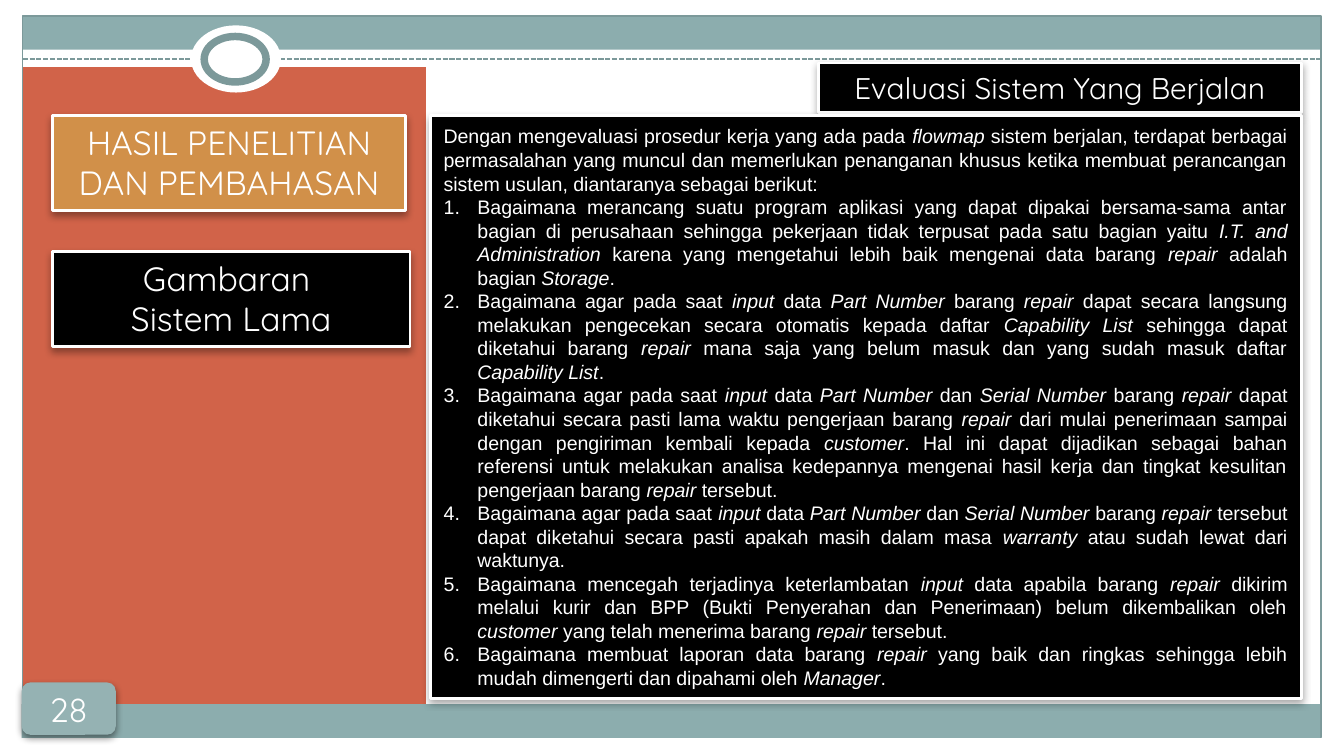
from lxml import etree
from pptx import Presentation
from pptx.dml.color import RGBColor
from pptx.enum.dml import MSO_LINE
from pptx.enum.shapes import MSO_CONNECTOR, MSO_SHAPE
from pptx.enum.text import MSO_ANCHOR, MSO_AUTO_SIZE, PP_ALIGN
from pptx.oxml.ns import qn
from pptx.util import Cm, Pt

RECTANGLE, OVAL = MSO_SHAPE.RECTANGLE, MSO_SHAPE.OVAL
ROUNDED = MSO_SHAPE.ROUNDED_RECTANGLE
STRAIGHT, SHORT_DASH = MSO_CONNECTOR.STRAIGHT, MSO_LINE.SQUARE_DOT
CENTER, JUSTIFY = PP_ALIGN.CENTER, PP_ALIGN.JUSTIFY
TOP, MIDDLE = MSO_ANCHOR.TOP, MSO_ANCHOR.MIDDLE
NO_AUTOFIT = MSO_AUTO_SIZE.NONE

WHITE = RGBColor(0xFF, 0xFF, 0xFF)
BLACK = RGBColor(0, 0, 0)
TEAL = RGBColor(0x8C, 0xAD, 0xAE)
DARK_TEAL = RGBColor(0x7C, 0x99, 0x9A)
LIGHT_TEAL = RGBColor(0x95, 0xB2, 0xB3)
RED = RGBColor(0xD1, 0x63, 0x49)
OCHRE = RGBColor(0xD1, 0x90, 0x49)

DISPLAY_FONT, BODY_FONT = "Quicksand", "Arial"

# Asterisks enclose italic words.
INTRO = (
    "Dengan mengevaluasi prosedur kerja yang ada pada *flowmap* sistem berjalan, "
    "terdapat berbagai permasalahan yang muncul dan memerlukan penanganan khusus "
    "ketika membuat perancangan sistem usulan, diantaranya sebagai berikut:"
)
PROBLEMS = [
    "Bagaimana merancang suatu program aplikasi yang dapat dipakai bersama-sama "
    "antar bagian di perusahaan sehingga pekerjaan tidak terpusat pada satu bagian "
    "yaitu *I.T. and Administration* karena yang mengetahui lebih baik mengenai "
    "data barang *repair* adalah bagian *Storage*.",
    "Bagaimana agar pada saat *input* data *Part Number* barang *repair* dapat "
    "secara langsung melakukan pengecekan secara otomatis kepada daftar "
    "*Capability List* sehingga dapat diketahui barang *repair* mana saja yang "
    "belum masuk dan yang sudah masuk daftar *Capability List*.",
    "Bagaimana agar pada saat *input* data *Part Number* dan *Serial Number* "
    "barang *repair* dapat diketahui secara pasti lama waktu pengerjaan barang "
    "*repair* dari mulai penerimaan sampai dengan pengiriman kembali kepada "
    "*customer*. Hal ini dapat dijadikan sebagai bahan referensi untuk melakukan "
    "analisa kedepannya mengenai hasil kerja dan tingkat kesulitan pengerjaan "
    "barang *repair* tersebut.",
    "Bagaimana agar pada saat *input* data *Part Number* dan *Serial Number* "
    "barang *repair* tersebut dapat diketahui secara pasti apakah masih dalam masa "
    "*warranty* atau sudah lewat dari waktunya.",
    "Bagaimana mencegah terjadinya keterlambatan *input* data apabila barang "
    "*repair* dikirim melalui kurir dan BPP (Bukti Penyerahan dan Penerimaan) "
    "belum dikembalikan oleh *customer* yang telah menerima barang *repair* "
    "tersebut.",
    "Bagaimana membuat laporan data barang *repair* yang baik dan ringkas sehingga "
    "lebih mudah dimengerti dan dipahami oleh *Manager*.",
]


def place(box, left, top, width, height):
    box.left, box.top = Cm(left), Cm(top)
    box.width, box.height = Cm(width), Cm(height)


def paint(box, fill=None, line=None, weight=1.57):
    box.shadow.inherit = False
    if fill is None:
        box.fill.background()
    else:
        box.fill.solid()
        box.fill.fore_color.rgb = fill
    if line is None:
        box.line.fill.background()
    else:
        box.line.color.rgb = line
        box.line.width = Pt(weight)


def add_shape(page, kind, bounds, fill=None, line=None, weight=1.57):
    box = page.shapes.add_shape(kind, *map(Cm, bounds))
    paint(box, fill, line, weight)
    return box


def add_shadow(box, opacity=35):
    """Cast a soft black shadow straight down."""
    effects = box.element.spPr.find(qn("a:effectLst"))
    shadow = etree.SubElement(
        effects, qn("a:outerShdw"), blurRad=str(Pt(4)), dist=str(Pt(2)),
        dir="5400000", algn="ctr", rotWithShape="0")
    color = etree.SubElement(shadow, qn("a:srgbClr"), val=str(BLACK))
    etree.SubElement(color, qn("a:alpha"), val=str(opacity * 1000))


def add_text(para, text, font, size):
    """Add runs, with the words between asterisks in italics."""
    for index, part in enumerate(text.split("*")):
        span = para.add_run()
        span.text = part
        span.font.name = font
        span.font.size = Pt(size)
        span.font.color.rgb = WHITE
        if index % 2:
            span.font.italic = True


def set_numbering(para, numbered):
    properties = para._p.get_or_add_pPr()
    indent = Cm(0.64) if numbered else 0
    properties.set("marL", str(indent))
    properties.set("indent", str(-indent))
    if numbered:
        etree.SubElement(properties, qn("a:buFont"), typeface="+mj-lt")
        etree.SubElement(properties, qn("a:buAutoNum"), type="arabicPeriod")
    else:
        etree.SubElement(properties, qn("a:buNone"))


def prepare_frame(box, anchor):
    frame = box.text_frame
    frame.word_wrap = True
    frame.auto_size = NO_AUTOFIT
    frame.vertical_anchor = anchor
    return frame


def write_label(box, lines, size=18, anchor=TOP):
    frame = prepare_frame(box, anchor)
    for index, line in enumerate(lines):
        para = frame.add_paragraph() if index else frame.paragraphs[0]
        para.alignment = CENTER
        add_text(para, line, DISPLAY_FONT, size)


def write_problems(box):
    frame = prepare_frame(box, MIDDLE)
    for index, text in enumerate([INTRO, *PROBLEMS]):
        para = frame.add_paragraph() if index else frame.paragraphs[0]
        set_numbering(para, numbered=index > 0)
        para.alignment = JUSTIFY
        para.space_before = Pt(0)
        para.line_spacing = Pt(12.6)
        add_text(para, text, BODY_FONT, 10.5)


def add_dashed_rule(page):
    rule = page.shapes.add_connector(STRAIGHT, Cm(0.43), Cm(1.12), Cm(24.97), Cm(1.12))
    rule.line.color.rgb = DARK_TEAL
    rule.line.width = Pt(0.9)
    rule.line.dash_style = SHORT_DASH
    etree.SubElement(rule.element.spPr, qn("a:effectLst"))


def add_frame(page):
    add_shape(page, RECTANGLE, (0.43, 0.3, 24.54, 0.64), TEAL)
    add_shape(page, RECTANGLE, (0.43, 1.27, 7.62, 12.22), RED)
    add_shape(page, RECTANGLE, (0.43, 0.3, 24.54, 13.64), line=DARK_TEAL, weight=0.75)
    add_dashed_rule(page)
    add_shape(page, OVAL, (3.61, 0.48, 1.7, 1.27), WHITE)
    add_shape(page, OVAL, (3.86, 0.69, 1.17, 0.86), WHITE, DARK_TEAL, 4)
    add_shape(page, RECTANGLE, (0.41, 13.31, 24.54, 0.64), TEAL)


def add_panel(page, bounds, fill, lines):
    panel = add_shape(page, RECTANGLE, bounds, fill, WHITE)
    add_shadow(panel)
    write_label(panel, lines)


def format_placeholder(box, bounds):
    """Style a placeholder as a black panel and bring it to the front."""
    place(box, *bounds)
    paint(box, BLACK, WHITE)
    add_shadow(box)
    box.element.getparent().append(box.element)


def main():
    deck = Presentation()
    deck.slide_width, deck.slide_height = Cm(25.4), Cm(14.29)
    page = deck.slides.add_slide(deck.slide_layouts[1])
    title, body = page.placeholders
    add_frame(page)

    add_panel(page, (0.99, 2.18, 6.68, 1.8), OCHRE,
              ["HASIL PENELITIAN", "DAN PEMBAHASAN"])
    format_placeholder(title, (15.47, 1.19, 9.12, 0.94))
    write_label(title, ["Evaluasi Sistem Yang Berjalan"], size=16)
    format_placeholder(body, (8.13, 2.18, 16.46, 11.02))
    write_problems(body)
    add_panel(page, (0.99, 4.75, 6.76, 1.8), BLACK, ["Gambaran ", "Sistem Lama"])

    page_number = add_shape(page, ROUNDED, (0.41, 12.9, 1.78, 0.99), LIGHT_TEAL)
    add_shadow(page_number, opacity=45)
    write_label(page_number, ["28"], anchor=MIDDLE)
    deck.save("out.pptx")


if __name__ == "__main__":
    main()
